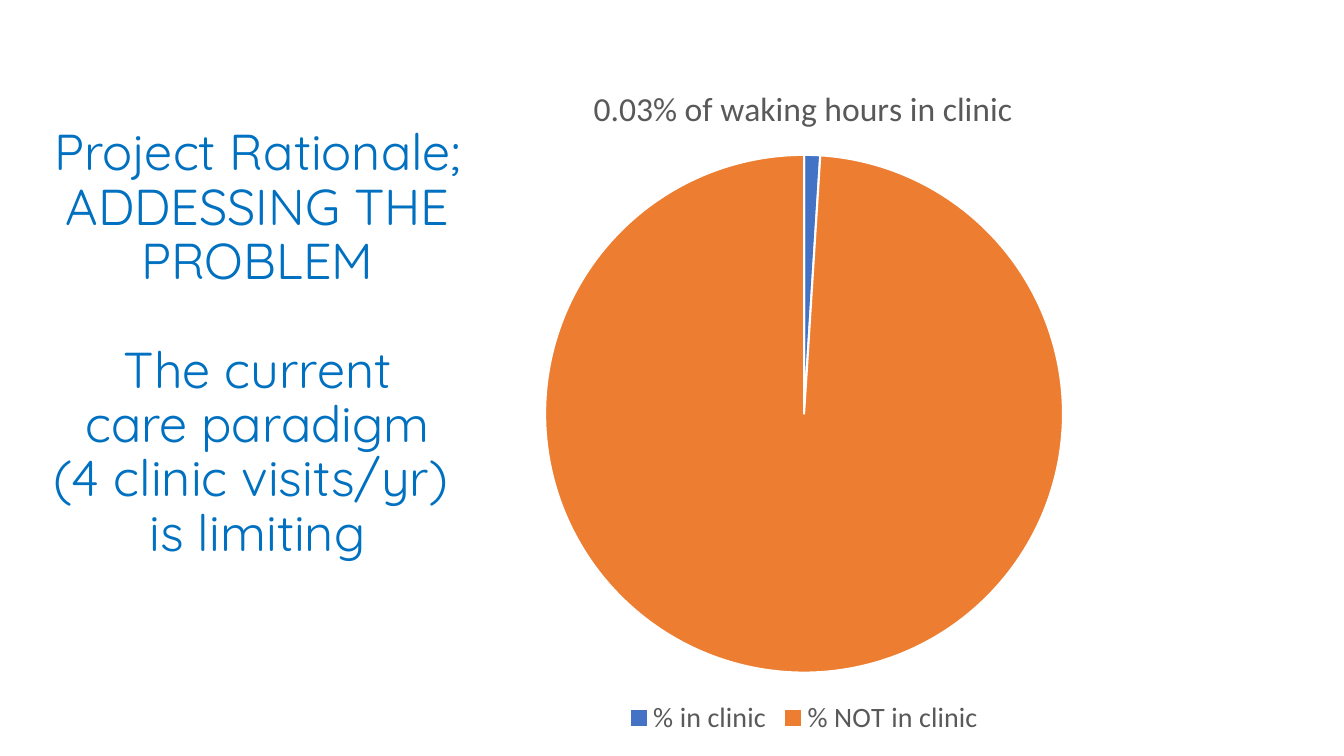
from dataclasses import dataclass
from lxml.etree import SubElement
from pptx import Presentation
from pptx.chart.data import CategoryChartData
from pptx.dml.color import RGBColor
from pptx.enum.chart import XL_CHART_TYPE, XL_LEGEND_POSITION
from pptx.enum.text import MSO_ANCHOR, MSO_AUTO_SIZE, PP_ALIGN
from pptx.oxml.ns import qn
from pptx.util import Inches, Pt

# Content
HEADING = [
    "Project Rationale; ADDESSING THE PROBLEM",
    "The current\vcare paradigm\v(4 clinic visits/yr) \vis limiting",
]
CAPTION = "0.03% of waking hours in clinic"
SHARES = {"% in clinic": 1, "% NOT in clinic": 99}

# Boxes as left, top, width, height in inches
SIZE = (13.33, 7.5)
TITLE_BOX = (0.2, 1.99, 4.71, 3.52)
CHART_BOX = (3.68, 0.59, 8.59, 6.76)
# Places inside the chart as shares of its size
PIE_AREA = {"x": 0.2, "y": 0.14, "w": 0.6, "h": 0.76}
CAPTION_AT = {"x": 0.25, "y": 0.03}


@dataclass
class Theme:
    head: RGBColor = RGBColor.from_string("0070C0")
    label: RGBColor = RGBColor.from_string("595959")
    edge: RGBColor = RGBColor.from_string("FFFFFF")
    slices: tuple = ("4472C4", "ED7D31")
    head_font: str = "Quicksand"
    chart_font: str = "Calibri"
    head_size: Pt = Pt(36)
    caption_size: Pt = Pt(24)
    legend_size: Pt = Pt(20)
    gap: Pt = Pt(38.5)


def style(font, name, size, color):
    font.name, font.size, font.bold = name, size, False
    font.color.rgb = color


def place(chart, tag, index, area):
    """Give a chart part a fixed place."""
    node = chart.element.find(".//" + qn(tag))
    for old in node.findall(qn("c:layout")):
        node.remove(old)
    layout = SubElement(node, qn("c:layout"))
    node.insert(index, layout)
    manual = SubElement(layout, qn("c:manualLayout"))
    if "w" in area:
        SubElement(manual, qn("c:layoutTarget")).set("val", "inner")
    for key in "xy":
        SubElement(manual, qn(f"c:{key}Mode")).set("val", "edge")
    for key, share in area.items():
        SubElement(manual, qn(f"c:{key}")).set("val", str(share))


def add_title(slide, theme):
    title = slide.shapes.title
    title.left, title.top, title.width, title.height = map(Inches, TITLE_BOX)
    frame = title.text_frame
    frame.text = "\n".join(HEADING)
    frame.word_wrap = True
    frame.auto_size = MSO_AUTO_SIZE.NONE
    frame.vertical_anchor = MSO_ANCHOR.MIDDLE
    frame.margin_bottom = Inches(0.71)
    for i, para in enumerate(frame.paragraphs):
        para.alignment = PP_ALIGN.CENTER
        para.line_spacing = 0.9
        para.space_before = theme.gap if i else Pt(0)
        for run in para.runs:
            style(run.font, theme.head_font, theme.head_size, theme.head)


def add_pie(slide, theme):
    data = CategoryChartData()
    data.categories = list(SHARES)
    data.add_series("Series 1", list(SHARES.values()))
    chart = slide.shapes.add_chart(
        XL_CHART_TYPE.PIE, *map(Inches, CHART_BOX), data).chart
    style(chart.font, theme.chart_font, theme.legend_size, theme.label)

    # Caption
    chart.has_title = True
    frame = chart.chart_title.text_frame
    frame.text = CAPTION
    style(frame.paragraphs[0].runs[0].font, theme.chart_font,
          theme.caption_size, theme.label)
    place(chart, "c:title", 1, CAPTION_AT)

    # Legend
    chart.has_legend = True
    chart.legend.position = XL_LEGEND_POSITION.BOTTOM
    chart.legend.include_in_layout = False
    style(chart.legend.font, theme.chart_font, theme.legend_size, theme.label)

    # Slices
    plot = chart.plots[0]
    plot.vary_by_categories = True
    for i, color in enumerate(theme.slices):
        look = plot.series[0].points[i].format
        look.fill.solid()
        look.fill.fore_color.rgb = RGBColor.from_string(color)
        look.line.color.rgb = theme.edge
        look.line.width = Pt(1.5)
    place(chart, "c:plotArea", 0, PIE_AREA)


def main():
    deck = Presentation()
    deck.slide_width, deck.slide_height = map(Inches, SIZE)
    slide = deck.slides.add_slide(deck.slide_layouts[5])
    theme = Theme()
    add_title(slide, theme)
    add_pie(slide, theme)
    deck.save("out.pptx")


if __name__ == "__main__":
    main()
